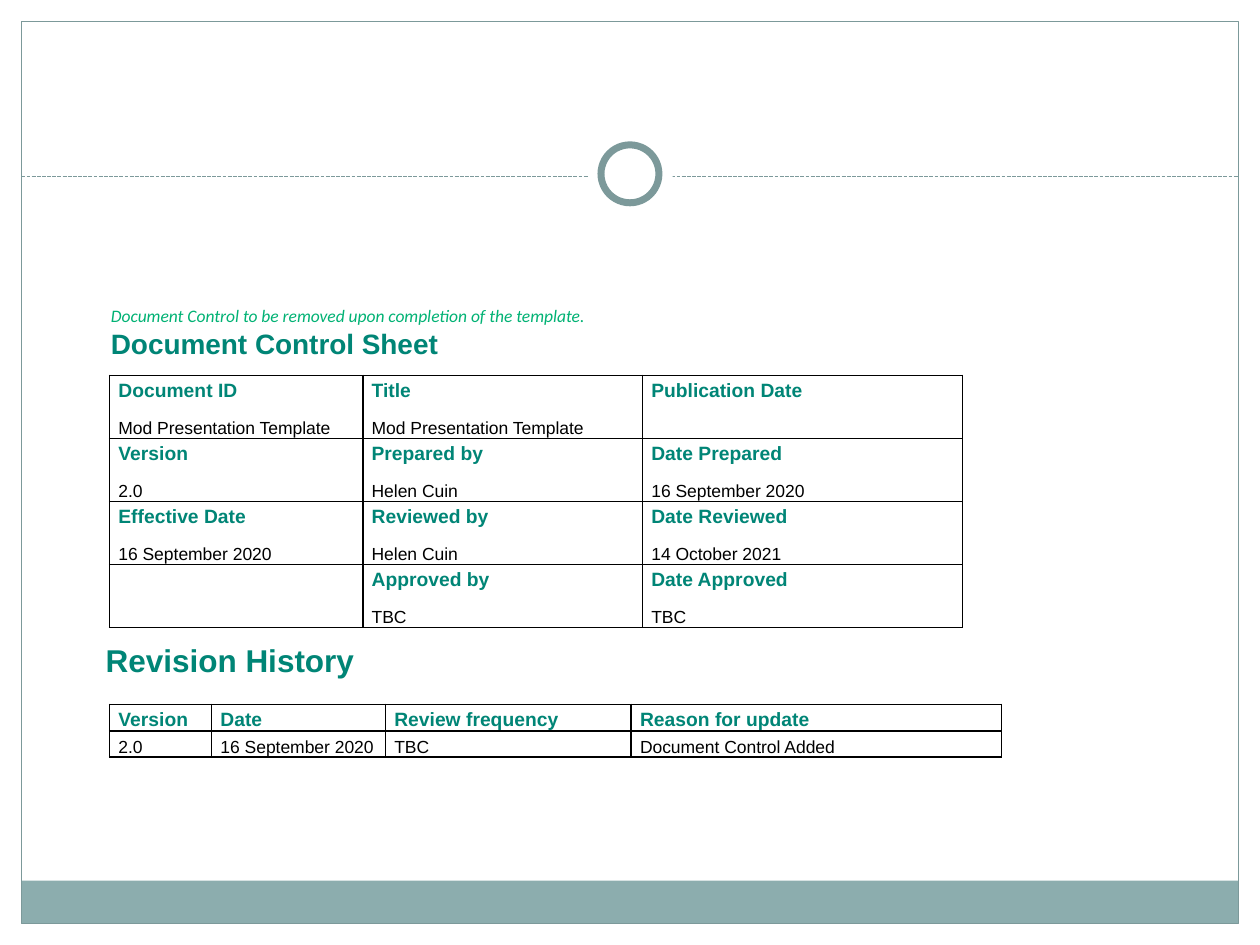
from lxml import etree
from pptx import Presentation, util as u
from pptx.dml.color import RGBColor
from pptx.enum import dml, shapes, text
from pptx.oxml import ns

GREEN, MINT, BLACK, WHITE = "008576", "00B274", "000000", "FFFFFF"
SAGE, BAR = "7C999A", "8CADAE"


def rgb(value):
    return RGBColor.from_string(value)


class Sheet:
    font = "Arial"

    def __init__(self, s):
        self.s = s

    def shape(self, kind, x, y, w, h, fill=None, line=None, width=0.75):
        sp = self.s.shapes.add_shape(kind, *map(u.Inches, (x, y, w, h)))
        sp.shadow.inherit = False
        if fill:
            sp.fill.solid()
            sp.fill.fore_color.rgb = rgb(fill)
        else:
            sp.fill.background()
        if line:
            sp.line.color.rgb = rgb(line)
            sp.line.width = u.Pt(width)
        else:
            sp.line.fill.background()

    def divider(self, x1, x2, y):
        line = self.s.shapes.add_connector(
            shapes.MSO_CONNECTOR.STRAIGHT, *map(u.Inches, (x1, y, x2, y)))
        line.line.color.rgb = rgb(SAGE)
        line.line.width = u.Pt(0.75)
        line.line.dash_style = dml.MSO_LINE.SQUARE_DOT
        etree.SubElement(line._element.spPr, ns.qn("a:effectLst"))

    def style(self, p, size, color, bold=False, italic=False, font=None):
        p.alignment = text.PP_ALIGN.LEFT
        for r in p.runs:
            r.font.name = font or self.font
            r.font.size = u.Pt(size)
            r.font.bold, r.font.italic = bold, italic
            r.font.color.rgb = rgb(color)

    def place(self, sp, x, y, w, h, wording, anchor):
        sp.left, sp.top, sp.width, sp.height = map(u.Inches, (x, y, w, h))
        tf = sp.text_frame
        tf.text = wording
        tf.word_wrap = True
        tf.auto_size = text.MSO_AUTO_SIZE.NONE
        tf.vertical_anchor = anchor
        return tf.paragraphs

    def title(self, x, y, w, h, wording):
        return self.place(self.s.shapes.title, x, y, w, h, wording,
                          text.MSO_ANCHOR.MIDDLE)

    def heading(self, x, y, w, h, wording):
        sp = self.s.shapes.add_textbox(0, 0, 0, 0)
        return self.place(sp, x, y, w, h, wording, text.MSO_ANCHOR.TOP)

    def borders(self, cell):
        tcPr = cell._tc.get_or_add_tcPr()
        for side in ("lnL", "lnR", "lnT", "lnB"):
            ln = etree.SubElement(tcPr, ns.qn(f"a:{side}"), w=str(u.Pt(1)))
            fill = etree.SubElement(ln, ns.qn("a:solidFill"))
            etree.SubElement(fill, ns.qn("a:srgbClr"), val=BLACK)

    def table(self, x, y, widths, row_height, rows, is_label):
        tbl = self.s.shapes.add_table(
            len(rows), len(widths), u.Inches(x), u.Inches(y),
            u.Inches(sum(widths)), u.Inches(row_height * len(rows))).table
        tbl.first_row = tbl.horz_banding = False
        for column, width in zip(tbl.columns, widths):
            column.width = u.Inches(width)
        for i, row in enumerate(rows):
            tbl.rows[i].height = u.Inches(row_height)
            for j, wording in enumerate(row):
                cell = tbl.cell(i, j)
                self.borders(cell)
                cell.fill.background()
                cell.margin_left = cell.margin_right = u.Inches(0.07)
                cell.margin_top = cell.margin_bottom = 0
                cell.text_frame.text = wording
                for k, p in enumerate(cell.text_frame.paragraphs):
                    p.line_spacing = u.Pt(15)
                    p.space_before = p.space_after = u.Pt(3)
                    if is_label(i, k):
                        self.style(p, 11, GREEN, bold=True)
                    else:
                        self.style(p, 10, BLACK)


def main():
    prs = Presentation()
    prs.slide_width, prs.slide_height = u.Inches(10), u.Inches(7.5)
    sheet = Sheet(prs.slides.add_slide(prs.slide_layouts[5]))
    rect, oval = shapes.MSO_SHAPE.RECTANGLE, shapes.MSO_SHAPE.OVAL

    sheet.shape(rect, 0, 0, 10, 1.52, WHITE)
    for x in (0, 9.83):
        sheet.shape(rect, x, 0, 0.17, 7.5, WHITE)
    sheet.shape(rect, 0.17, 6.99, 9.66, 0.34, BAR)
    sheet.shape(rect, 0.17, 0.17, 9.66, 7.16, line=SAGE)
    sheet.divider(0.17, 9.83, 1.4)
    sheet.shape(oval, 4.67, 1.05, 0.67, 0.67, WHITE)
    sheet.shape(oval, 4.77, 1.15, 0.46, 0.46, WHITE, SAGE, 4)

    control = [
        ("Document ID\nMod Presentation Template",
         "Title\nMod Presentation Template", "Publication Date"),
        ("Version\n2.0", "Prepared by\nHelen Cuin",
         "Date Prepared\n16 September 2020"),
        ("Effective Date\n16 September 2020", "Reviewed by\nHelen Cuin",
         "Date Reviewed\n14 October 2021"),
        ("", "Approved by\nTBC", "Date Approved\nTBC"),
    ]
    sheet.table(0.87, 2.98, (2.01, 2.22, 2.54), 0.5, control,
                lambda row, line: line == 0)
    revisions = [
        ("Version", "Date", "Review frequency", "Reason for update"),
        ("2.0", "16 September 2020", "TBC", "Document Control Added"),
    ]
    sheet.table(0.87, 5.59, (0.81, 1.38, 1.95, 2.94), 0.21, revisions,
                lambda row, line: row == 0)

    note, name = sheet.title(
        0.78, 2.37, 4.01, 0.54,
        "Document Control to be removed upon completion of the template.\n"
        "Document Control Sheet")
    sheet.style(note, 10, MINT, italic=True, font="Calibri")
    sheet.style(name, 16, GREEN, bold=True)
    history, = sheet.heading(0.74, 5.04, 6.67, 0.4, "Revision History")
    sheet.style(history, 18, GREEN, bold=True)

    prs.save("out.pptx")


if __name__ == "__main__":
    main()
